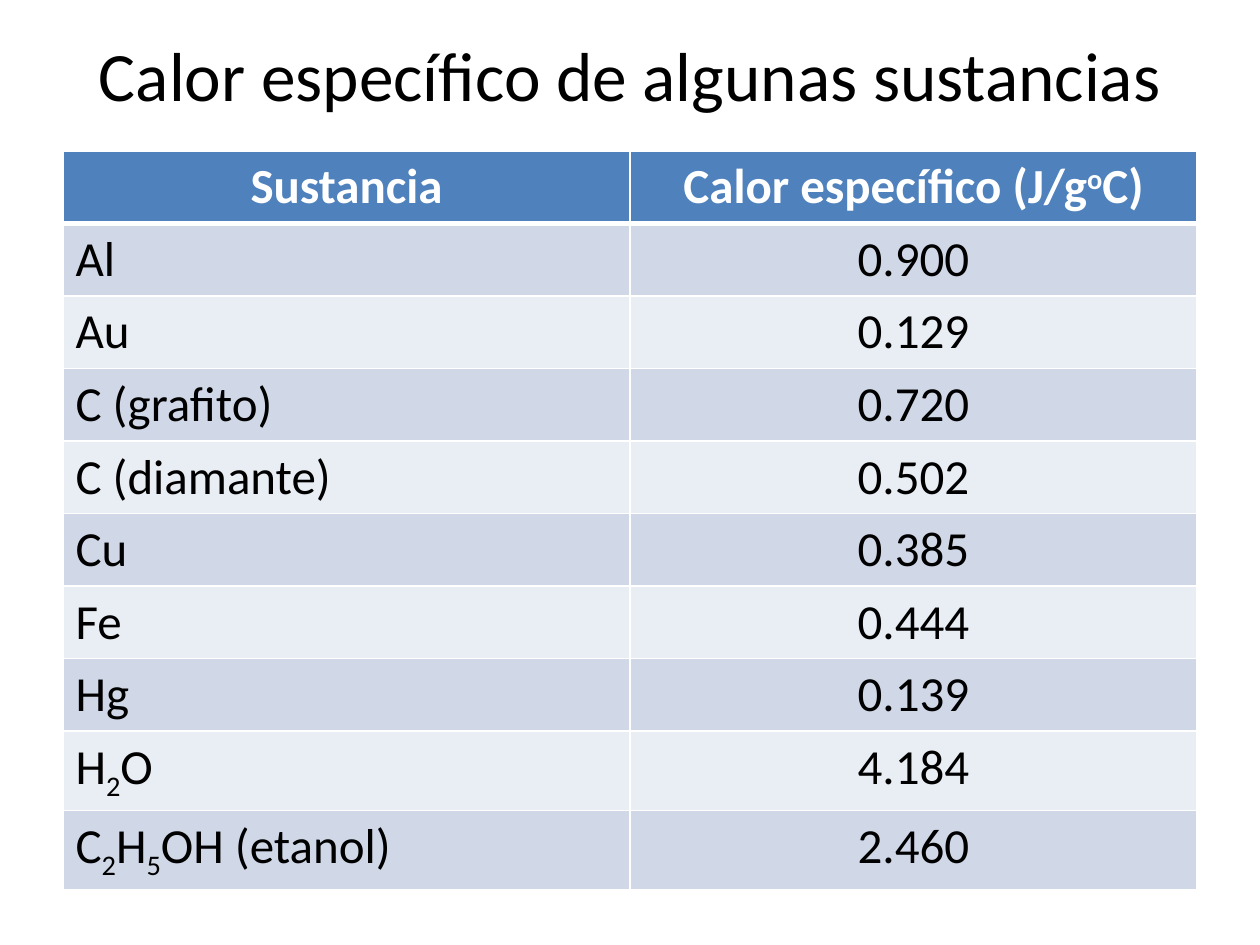
from dataclasses import dataclass

from lxml import etree
from pptx import Presentation
from pptx.dml.color import RGBColor
from pptx.enum import text
from pptx.oxml import ns
from pptx.util import Pt

PX = 914400 / 126  # EMU in one px


@dataclass(frozen=True)
class Theme:
    font: str = "Calibri"
    title_size: float = 39.6
    cell_size: int = 28
    ink: str = "000000"
    paper: str = "FFFFFF"
    header: str = "4F81BD"
    bands: tuple = ("D0D8E8", "E9EDF4")
    thin: int = 1
    thick: int = 3


THEME = Theme()
SUPERSCRIPT, SUBSCRIPT = 30000, -25000
TITLE = "Calor específico de algunas sustancias"
# Text between a pair of bars is raised in the header and lowered in the body
HEADER = ("Sustancia", "Calor específico (J/g|o|C)")
SUBSTANCES = [
    ("Al", "0.900"),
    ("Au", "0.129"),
    ("C (grafito)", "0.720"),
    ("C (diamante)", "0.502"),
    ("Cu", "0.385"),
    ("Fe", "0.444"),
    ("Hg", "0.139"),
    ("H|2|O", "4.184"),
    ("C|2|H|5|OH (etanol)", "2.460"),
]


def px(*lengths):
    return [round(length * PX) for length in lengths]


def write(frame, words, size, color=THEME.ink, bold=False, centered=True,
          shift=SUBSCRIPT):
    para = frame.paragraphs[0]
    para.alignment = text.PP_ALIGN.CENTER if centered else text.PP_ALIGN.LEFT
    for index, part in enumerate(words.split("|")):
        span = para.add_run()
        span.text = part
        span.font.name = THEME.font
        span.font.size = Pt(size)
        span.font.bold = bold
        span.font.color.rgb = RGBColor.from_string(color)
        if index % 2:
            span.font._element.set("baseline", str(shift))


def add_borders(cell, top, bottom):
    properties = cell._tc.get_or_add_tcPr()
    widths = {"L": THEME.thin, "R": THEME.thin, "T": top, "B": bottom}
    for side, width in widths.items():
        line = etree.SubElement(properties, ns.qn(f"a:ln{side}"), w=str(Pt(width)))
        fill = etree.SubElement(line, ns.qn("a:solidFill"))
        etree.SubElement(fill, ns.qn("a:srgbClr"), val=THEME.paper)


def add_title(page, words, left, top, width, height):
    box = page.shapes.title
    box.left, box.top, box.width, box.height = px(left, top, width, height)
    frame = box.text_frame
    frame.auto_size = text.MSO_AUTO_SIZE.NONE
    frame.vertical_anchor = text.MSO_ANCHOR.MIDDLE
    write(frame, words, THEME.title_size)


def add_data_table(page, rows, left, top, width, row_height):
    table = page.shapes.add_table(
        len(rows), len(rows[0]), *px(left, top, width, row_height * len(rows))
    ).table
    for row, values in enumerate(rows):
        is_header = row == 0
        fill = THEME.header if is_header else THEME.bands[(row - 1) % 2]
        for column, words in enumerate(values):
            cell = table.cell(row, column)
            # The heavy rule lies between the header and the first data row
            add_borders(cell, top=THEME.thick if row == 1 else THEME.thin,
                        bottom=THEME.thick if is_header else THEME.thin)
            cell.fill.solid()
            cell.fill.fore_color.rgb = RGBColor.from_string(fill)
            write(cell.text_frame, words, THEME.cell_size,
                  color=THEME.paper if is_header else THEME.ink,
                  bold=is_header, centered=is_header or column > 0,
                  shift=SUPERSCRIPT if is_header else SUBSCRIPT)


def main():
    deck = Presentation()
    deck.slide_width, deck.slide_height = px(1260, 945)
    page = deck.slides.add_slide(deck.slide_layouts.get_by_name("Title Only"))
    add_title(page, TITLE, 63, 23, 1134, 102)
    add_data_table(page, [HEADER, *SUBSTANCES], 63, 151, 1134, 64)
    deck.save("out.pptx")


if __name__ == "__main__":
    main()
